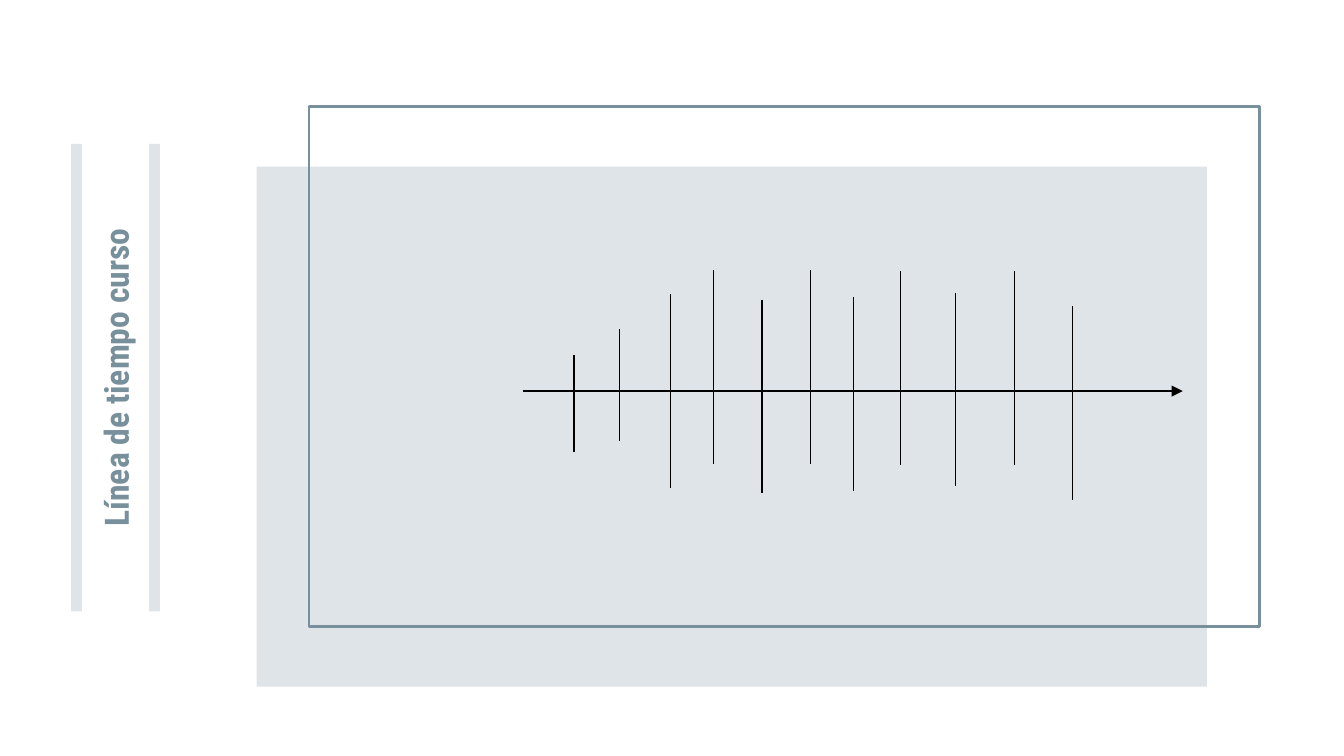
import pptx
import pptx.util
import pptx.dml.color
import pptx.enum.shapes
import pptx.enum.text
import pptx.oxml.ns
import lxml.etree

Inches = pptx.util.Inches
Pt = pptx.util.Pt
qn = pptx.oxml.ns.qn

COLORS = {"slate": "78909C", "ink": "000000", "paper": "FFFFFF"}
FONT = "Roboto Condensed"
SLIDE_WIDTH = 10
SLIDE_HEIGHT = SLIDE_WIDTH * 9 / 16


def rgb(name):
    return pptx.dml.color.RGBColor.from_string(COLORS[name])


def place_upright(shape, left, top, width, height):
    """Turn a shape by 270 degrees so that it covers the given upright box."""
    shape.width, shape.height = Inches(height), Inches(width)
    shape.left = Inches(left + (width - height) / 2)
    shape.top = Inches(top + (height - width) / 2)
    shape.rotation = 270


def add_rectangle(slide, left, top, width, height):
    rectangle = slide.shapes.add_shape(
        pptx.enum.shapes.MSO_SHAPE.RECTANGLE,
        Inches(left), Inches(top), Inches(width), Inches(height))
    rectangle.shadow.inherit = False
    return rectangle


def fill_tint(shape):
    shape.fill.solid()
    shape.fill.fore_color.rgb = rgb("slate")
    color = shape._element.spPr.find(qn("a:solidFill"))[0]
    lxml.etree.SubElement(color, qn("a:alpha")).set("val", "24000")
    shape.line.fill.background()


def add_line(slide, x1, y1, x2, y2, arrow=False):
    line = slide.shapes.add_connector(
        pptx.enum.shapes.MSO_CONNECTOR.STRAIGHT,
        Inches(x1), Inches(y1), Inches(x2), Inches(y2))
    line.line.color.rgb = rgb("ink")
    line.line.width = Pt(0.75)
    if arrow:
        outline = line._element.spPr.find(qn("a:ln"))
        lxml.etree.SubElement(outline, qn("a:tailEnd")).set("type", "triangle")
    lxml.etree.SubElement(line._element.spPr, qn("a:effectLst"))


def add_frame(slide, left, top, width, height):
    # Outlined frame behind a tinted panel shifted down and left
    frame = add_rectangle(slide, left, top, width, height)
    frame.fill.background()
    frame.line.color.rgb = rgb("slate")
    frame.line.width = Pt(1.5)
    fill_tint(add_rectangle(slide, left - 0.39, top + 0.45, width, height))


def add_heading(slide, left, top, width, height):
    # Vertical title
    title = slide.shapes.title
    place_upright(title, left - 0.22, top + (height - 6.04) / 2, 0.8, 6.04)
    text = title.text_frame
    text.text = "Línea de tiempo curso"
    text.word_wrap = True
    text.auto_size = pptx.enum.text.MSO_AUTO_SIZE.NONE
    text.vertical_anchor = pptx.enum.text.MSO_ANCHOR.BOTTOM
    text.margin_left = text.margin_right = Inches(0.1)
    text.margin_top = text.margin_bottom = Inches(0.1)
    paragraph = text.paragraphs[0]
    paragraph.alignment = pptx.enum.text.PP_ALIGN.CENTER
    paragraph.font.name = FONT
    paragraph.font.size = Pt(18)
    paragraph.font.bold = True
    paragraph.font.color.rgb = rgb("slate")

    # Bars on both sides of the title
    bar_width = 0.08
    for bar_left in (left, left + width - bar_width):
        bar = add_rectangle(slide, bar_left, top, bar_width, height)
        place_upright(bar, bar_left, top, bar_width, height)
        fill_tint(bar)


def add_timeline(slide, left, top, width, height):
    # Axis
    axis_y = top + 0.9
    add_line(slide, left, axis_y, left + width, axis_y, arrow=True)

    # Marks: offset along the axis, top offset, length
    full = 1.44
    marks = [(0.38, 0.63, 0.72), (0.72, 0.44, 0.83), (1.10, 0.18, full),
             (1.42, 0, full), (1.78, 0.22, full), (2.14, 0, full),
             (2.46, 0.20, full), (2.81, 0.01, full), (3.22, 0.17, full),
             (3.66, 0.01, full), (4.09, height - full, full)]
    for offset, drop, length in marks:
        add_line(slide, left + offset, top + drop,
                 left + offset, top + drop + length)


def main():
    deck = pptx.Presentation()
    deck.slide_width = Inches(SLIDE_WIDTH)
    deck.slide_height = Inches(SLIDE_HEIGHT)
    slide = deck.slides.add_slide(deck.slide_layouts.get_by_name("Title Only"))
    slide.background.fill.solid()
    slide.background.fill.fore_color.rgb = rgb("paper")

    add_frame(slide, 2.3, 0.79, 7.07, 3.87)
    add_heading(slide, 0.53, 1.07, 0.66, 3.48)
    add_timeline(slide, 3.89, 2.01, 4.91, 1.71)
    deck.save("out.pptx")


if __name__ == "__main__":
    main()
